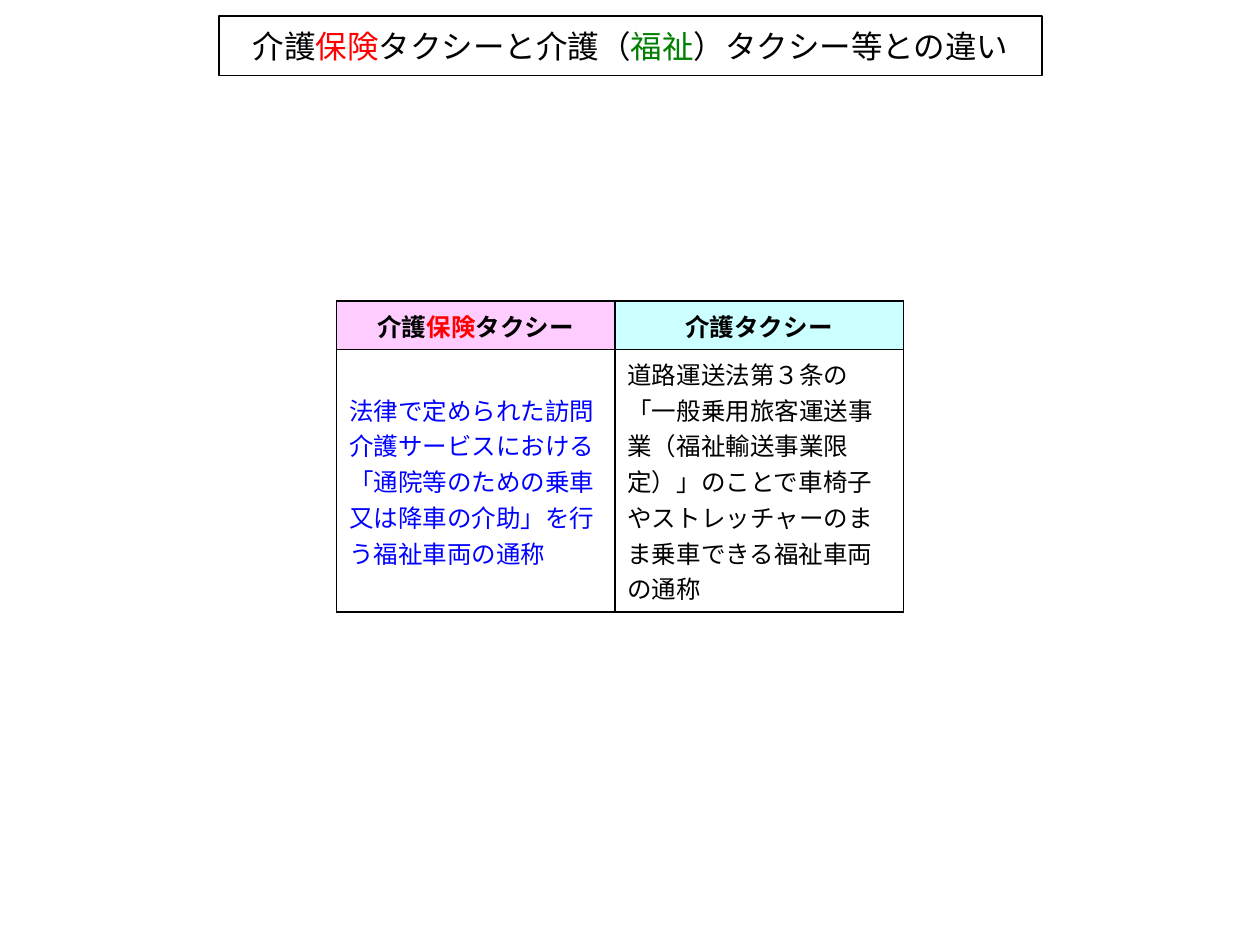
from lxml import etree
from pptx import Presentation
from pptx.dml.color import RGBColor
from pptx.enum.shapes import MSO_SHAPE
from pptx.enum.text import MSO_ANCHOR, PP_ALIGN
from pptx.oxml.ns import qn
from pptx.util import Pt

RECT = MSO_SHAPE.RECTANGLE
MIDDLE = MSO_ANCHOR.MIDDLE
LEFT, CENTER = PP_ALIGN.LEFT, PP_ALIGN.CENTER

THEME = {
    "font": "Noto Sans CJK JP", "title": 18, "body": 14, "line": 1,
    "black": "000000", "white": "FFFFFF", "red": "FF0000",
    "green": "008000", "blue": "0000FF", "pink": "FFCCFF", "cyan": "CCFFFF",
}

TITLE = [("介護", "black"), ("保険", "red"), ("タクシーと介護（", "black"),
         ("福祉", "green"), ("）タクシー等との違い", "black")]
HEADERS = [
    ([("介護", "black"), ("保険", "red"), ("タクシー", "black")], "pink"),
    ([("介護タクシー", "black")], "cyan"),
]
DEFINITIONS = [
    ([("法律で定められた訪問介護サービスにおける「通院等のための乗車又は降車の介助」"
       "を行う福祉車両の通称", "blue")], "white"),
    ([("道路運送法第３条の「一般乗用旅客運送事業（福祉輸送事業限定）」のことで"
       "車椅子やストレッチャーのまま乗車できる福祉車両の通称", "black")], "white"),
]
TITLE_BOX = (125.28, 9.36, 470.16, 33.84)
TABLE_LEFT, TABLE_TOP, TABLE_HEIGHT = 192.24, 172.08, 149.76
COL_WIDTHS = (159.12, 164.88)
ROW_HEIGHT = 25.2


def color(name):
    return RGBColor.from_string(THEME[name])


def paint(fill, name):
    fill.solid()
    fill.fore_color.rgb = color(name)


def write(tf, runs, size="body", bold=False, align=LEFT):
    tf.word_wrap = True
    p = tf.paragraphs[0]
    p.alignment = align
    for text, name in runs:
        r = p.add_run()
        r.text = text
        r.font.name = THEME["font"]
        r.font.size = Pt(THEME[size])
        r.font.bold = bold
        r.font.color.rgb = color(name)
        ea = etree.SubElement(r.font._element, qn("a:ea"))
        ea.set("typeface", THEME["font"])


def add_borders(cell):
    tc_pr = cell._tc.get_or_add_tcPr()
    for i, side in enumerate(("lnL", "lnR", "lnT", "lnB")):
        ln = etree.Element(qn("a:" + side), w=str(Pt(THEME["line"])))
        fill = etree.SubElement(ln, qn("a:solidFill"))
        etree.SubElement(fill, qn("a:srgbClr"), val=THEME["black"])
        tc_pr.insert(i, ln)


def add_comparison(s):
    rows = [HEADERS, DEFINITIONS]
    frame = s.shapes.add_table(len(rows), len(COL_WIDTHS), Pt(TABLE_LEFT), Pt(TABLE_TOP),
                               Pt(sum(COL_WIDTHS)), Pt(TABLE_HEIGHT))
    table = frame.table
    for column, width in zip(table.columns, COL_WIDTHS):
        column.width = Pt(width)
    for i, row in enumerate(rows):
        table.rows[i].height = Pt(ROW_HEIGHT)
        header = i == 0
        for j, (runs, fill) in enumerate(row):
            cell = table.cell(i, j)
            cell.vertical_anchor = MIDDLE
            paint(cell.fill, fill)
            add_borders(cell)
            write(cell.text_frame, runs, bold=header, align=CENTER if header else LEFT)
    frame.height = Pt(TABLE_HEIGHT)


def add_title(s):
    sp = s.shapes.add_shape(RECT, *map(Pt, TITLE_BOX))
    sp.shadow.inherit = False
    paint(sp.fill, "white")
    sp.line.color.rgb = color("black")
    sp.line.width = Pt(THEME["line"])
    sp.text_frame.vertical_anchor = MIDDLE
    write(sp.text_frame, TITLE, size="title", align=CENTER)


def main():
    prs = Presentation()
    prs.slide_width, prs.slide_height = Pt(720), Pt(540)
    s = prs.slides.add_slide(prs.slide_layouts[6])
    add_comparison(s)
    add_title(s)
    prs.save("out.pptx")


if __name__ == "__main__":
    main()
